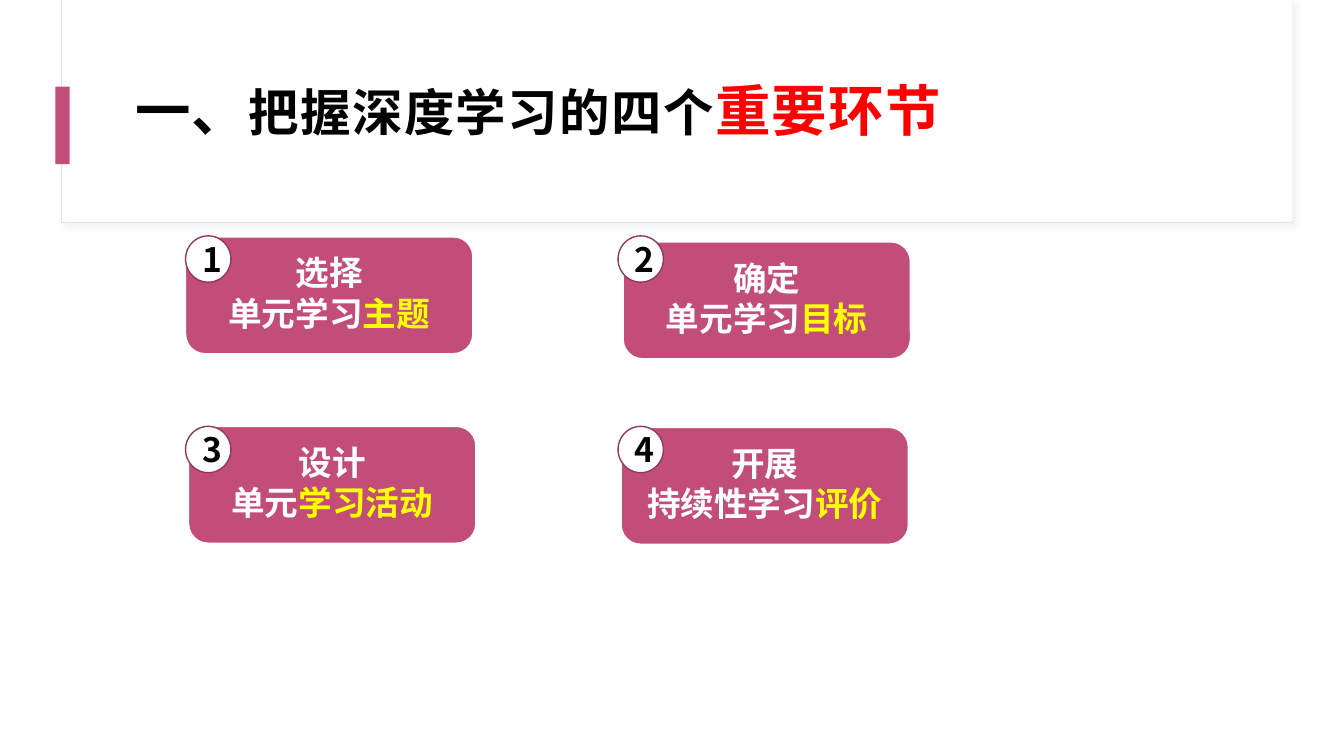
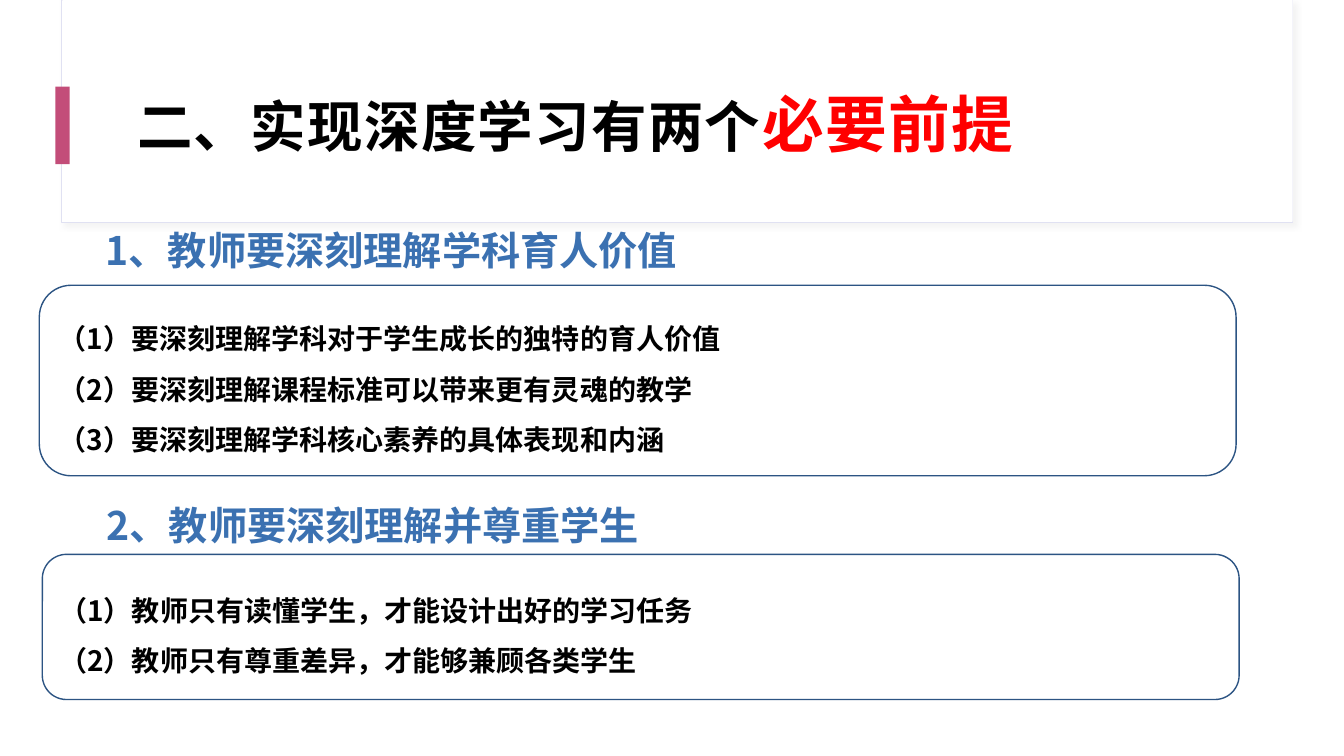
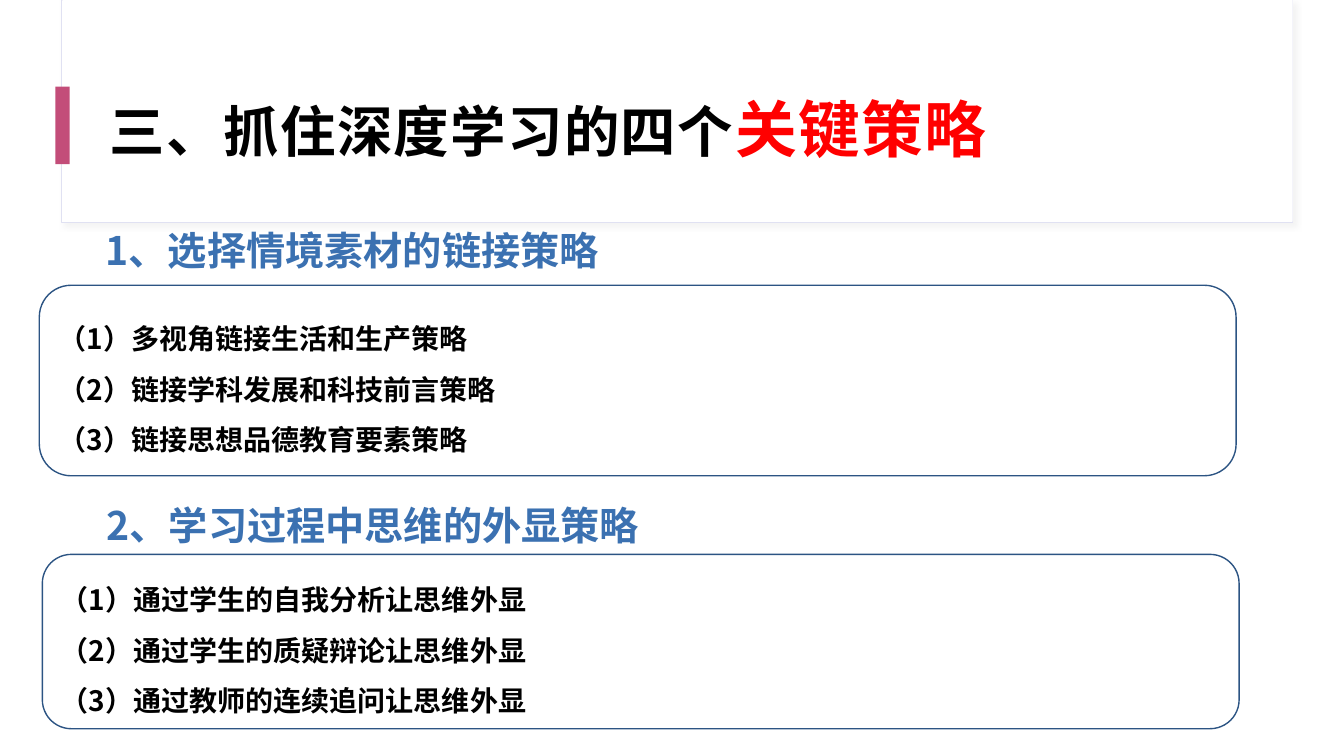
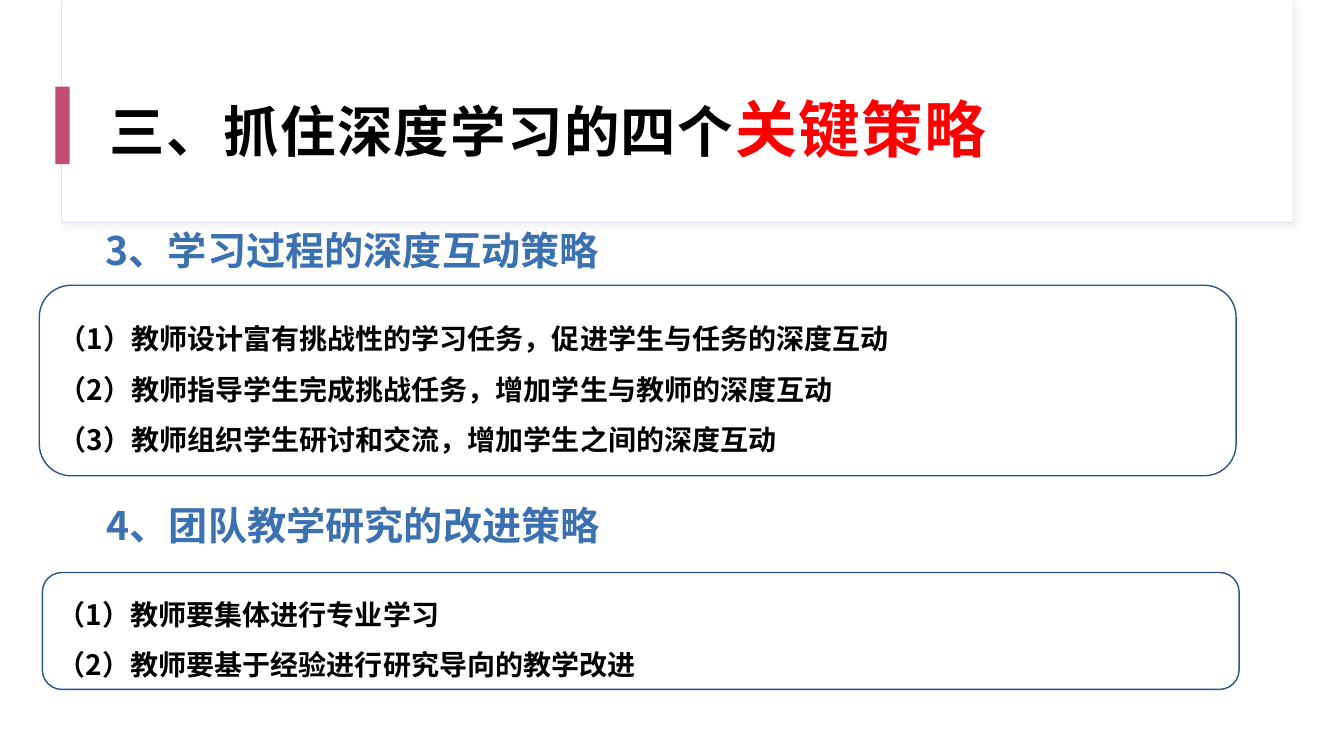
from lxml.etree import SubElement
from pptx import Presentation
from pptx.dml.color import RGBColor
from pptx.enum.shapes import MSO_SHAPE
from pptx.enum.text import MSO_ANCHOR, PP_ALIGN
from pptx.oxml import parse_xml
from pptx.oxml.ns import nsdecls, qn
from pptx.util import Inches, Pt

FONT = "Noto Sans CJK SC"
WHITE = RGBColor(0xFF, 0xFF, 0xFF)
BLACK = RGBColor(0x00, 0x00, 0x00)
RED = RGBColor(0xFF, 0x00, 0x00)
YELLOW = RGBColor(0xFF, 0xFF, 0x00)
ROSE = RGBColor(0xC3, 0x4D, 0x79)
DARK_ROSE = RGBColor(0x90, 0x39, 0x5A)
BLUE = RGBColor(0x3B, 0x71, 0xB1)
NAVY = RGBColor(0x2C, 0x54, 0x83)
LILAC = RGBColor(0xE0, 0xE1, 0xF2)

BAND_SHADOW = f"""<a:effectLst {nsdecls("a")}>
  <a:outerShdw blurRad="50800" dist="38100" dir="2700000" algn="tl" rotWithShape="0">
    <a:srgbClr val="D9D9D9"><a:alpha val="30000"/></a:srgbClr>
  </a:outerShdw>
</a:effectLst>"""


def write(frame, paragraphs, size=20, color=BLACK, align=PP_ALIGN.LEFT,
          line_spacing=1.0, space_after=0, letter_spacing=0):
    """Fill a text frame; a paragraph is a list of (text, run overrides)."""
    frame.word_wrap = True
    for index, runs in enumerate(paragraphs):
        para = frame.add_paragraph() if index else frame.paragraphs[0]
        para.alignment = align
        para.line_spacing = line_spacing
        para.space_before = Pt(0)
        para.space_after = Pt(space_after)
        for text, changes in runs:
            span = para.add_run()
            span.text = text
            font = span.font
            font.name = FONT
            font.bold = True
            font.size = Pt(changes.get("size", size))
            font.color.rgb = changes.get("color", color)
            properties = span._r.get_or_add_rPr()
            SubElement(properties, qn("a:ea")).set("typeface", FONT)
            if letter_spacing:
                properties.set("spc", str(letter_spacing * 100))


def add_box(slide, kind, at, fill=None, line=None, line_width=1):
    box = slide.shapes.add_shape(kind, *map(Inches, at))
    box.shadow.inherit = False
    if fill is None:
        box.fill.background()
    else:
        box.fill.solid()
        box.fill.fore_color.rgb = fill
    if line is None:
        box.line.fill.background()
    else:
        box.line.color.rgb = line
        box.line.width = Pt(line_width)
    box.text_frame.vertical_anchor = MSO_ANCHOR.MIDDLE
    return box


def decorate_layout(layout, slide):
    """Build the title band on a slide and move it into the shared layout."""
    border = add_box(slide, MSO_SHAPE.RECTANGLE, (0.61, 0, 12.21, 2.21), WHITE, LILAC, 0.75)
    properties = border.element.spPr
    properties.replace(properties.find(qn("a:effectLst")), parse_xml(BAND_SHADOW))
    band = add_box(slide, MSO_SHAPE.RECTANGLE, (0.62, 0, 12.2, 2.2), WHITE)
    accent = add_box(slide, MSO_SHAPE.RECTANGLE, (0.55, 0.86, 0.14, 0.77), ROSE)
    for index, shape in enumerate((border, band, accent)):
        shape.element.nvSpPr.cNvPr.set("id", str(100 + index))
        layout.shapes.element.insert(2 + index, shape.element)


def set_title(slide, left, top, lead, emphasis, emphasis_size=44.1):
    title = slide.shapes.title
    title.left, title.top = Inches(left), Inches(top)
    title.width, title.height = Inches(11.12), Inches(1.29)
    frame = title.text_frame
    frame.vertical_anchor = MSO_ANCHOR.MIDDLE
    frame.margin_left = frame.margin_right = frame.margin_top = Inches(0.12)
    frame.margin_bottom = Inches(0.72)
    accent = (emphasis, {"size": emphasis_size, "color": RED})
    write(frame, [[*lead, accent]], size=39.6, line_spacing=1.05, letter_spacing=1)


def add_card(slide, left, top, action, subject, highlight):
    card = add_box(slide, MSO_SHAPE.ROUNDED_RECTANGLE, (left, top, 2.85, 1.16), ROSE, WHITE)
    write(card.text_frame, [[(action, {})], [(subject, {}), (highlight, {"color": YELLOW})]],
          size=24, color=WHITE, align=PP_ALIGN.CENTER, line_spacing=0.9, space_after=3)


def add_badge(slide, index):
    row, column = divmod(index, 2)
    at = (1.84 + 4.29 * column, 2.34 + 1.89 * row, 0.45, 0.46)
    badge = add_box(slide, MSO_SHAPE.OVAL, at, WHITE, DARK_ROSE)
    write(badge.text_frame, [[(str(index + 1), {})]], size=24, align=PP_ALIGN.CENTER)


def add_section(slide, heading_at, panel_at, heading, items):
    """Add a blue heading above an outlined panel of numbered points."""
    box = slide.shapes.add_textbox(*map(Inches, (*heading_at, 6.61, 0.57)))
    write(box.text_frame, [[(heading, {})]], size=28, color=BLUE)
    panel = add_box(slide, MSO_SHAPE.ROUNDED_RECTANGLE, panel_at, line=NAVY)
    points = [[(f"（{number}）{item}", {})] for number, item in enumerate(items, 1)]
    write(panel.text_frame, points, line_spacing=1.5)


def add_sections(slide, upper, lower, lower_top, lower_height):
    add_section(slide, (0.95, 2.2), (0.39, 2.83, 11.87, 1.89), *upper)
    add_section(slide, (0.96, 4.92), (0.42, lower_top, 11.87, lower_height), *lower)


def build_steps(slide):
    set_title(slide, 1.22, 0.72, [("一、", {}), ("把握深度学习的四个", {"size": 36})],
              "重要环节", emphasis_size=39.6)
    cards = [
        (1.84, 2.35, "选择", "单元学习", "主题"),
        (6.18, 2.4, "确定", "单元学习", "目标"),
        (1.87, 4.23, "设计", "单元", "学习活动"),
        (6.16, 4.24, "开展", "持续性学习", "评价"),
    ]
    for index, card in enumerate(cards):
        add_card(slide, *card)
        add_badge(slide, index)


def build_premises(slide):
    set_title(slide, 1.24, 0.86, [("二、实现深度学习有两个", {})], "必要前提")
    add_sections(
        slide,
        ("1、教师要深刻理解学科育人价值", [
            "要深刻理解学科对于学生成长的独特的育人价值",
            "要深刻理解课程标准可以带来更有灵魂的教学",
            "要深刻理解学科核心素养的具体表现和内涵"]),
        ("2、教师要深刻理解并尊重学生", [
            "教师只有读懂学生，才能设计出好的学习任务",
            "教师只有尊重差异，才能够兼顾各类学生"]),
        lower_top=5.5, lower_height=1.44)


def build_strategies(slide, *sections, **lower_panel):
    set_title(slide, 0.97, 0.9, [("三、抓住深度学习的四个", {})], "关键策略")
    add_sections(slide, *sections, **lower_panel)


def main():
    deck = Presentation()
    deck.slide_width, deck.slide_height = Inches(13.33), Inches(7.5)
    layout = deck.slide_layouts.get_by_name("Title Only")
    steps, premises, linking, interaction = [deck.slides.add_slide(layout) for _ in range(4)]
    decorate_layout(layout, steps)

    build_steps(steps)
    build_premises(premises)
    build_strategies(
        linking,
        ("1、选择情境素材的链接策略", [
            "多视角链接生活和生产策略",
            "链接学科发展和科技前言策略",
            "链接思想品德教育要素策略"]),
        ("2、学习过程中思维的外显策略", [
            "通过学生的自我分析让思维外显",
            "通过学生的质疑辩论让思维外显",
            "通过教师的连续追问让思维外显"]),
        lower_top=5.5, lower_height=1.73)
    build_strategies(
        interaction,
        ("3、学习过程的深度互动策略", [
            "教师设计富有挑战性的学习任务，促进学生与任务的深度互动",
            "教师指导学生完成挑战任务，增加学生与教师的深度互动",
            "教师组织学生研讨和交流，增加学生之间的深度互动"]),
        ("4、团队教学研究的改进策略", [
            "教师要集体进行专业学习",
            "教师要基于经验进行研究导向的教学改进"]),
        lower_top=5.68, lower_height=1.16)
    deck.save("out.pptx")


if __name__ == "__main__":
    main()
